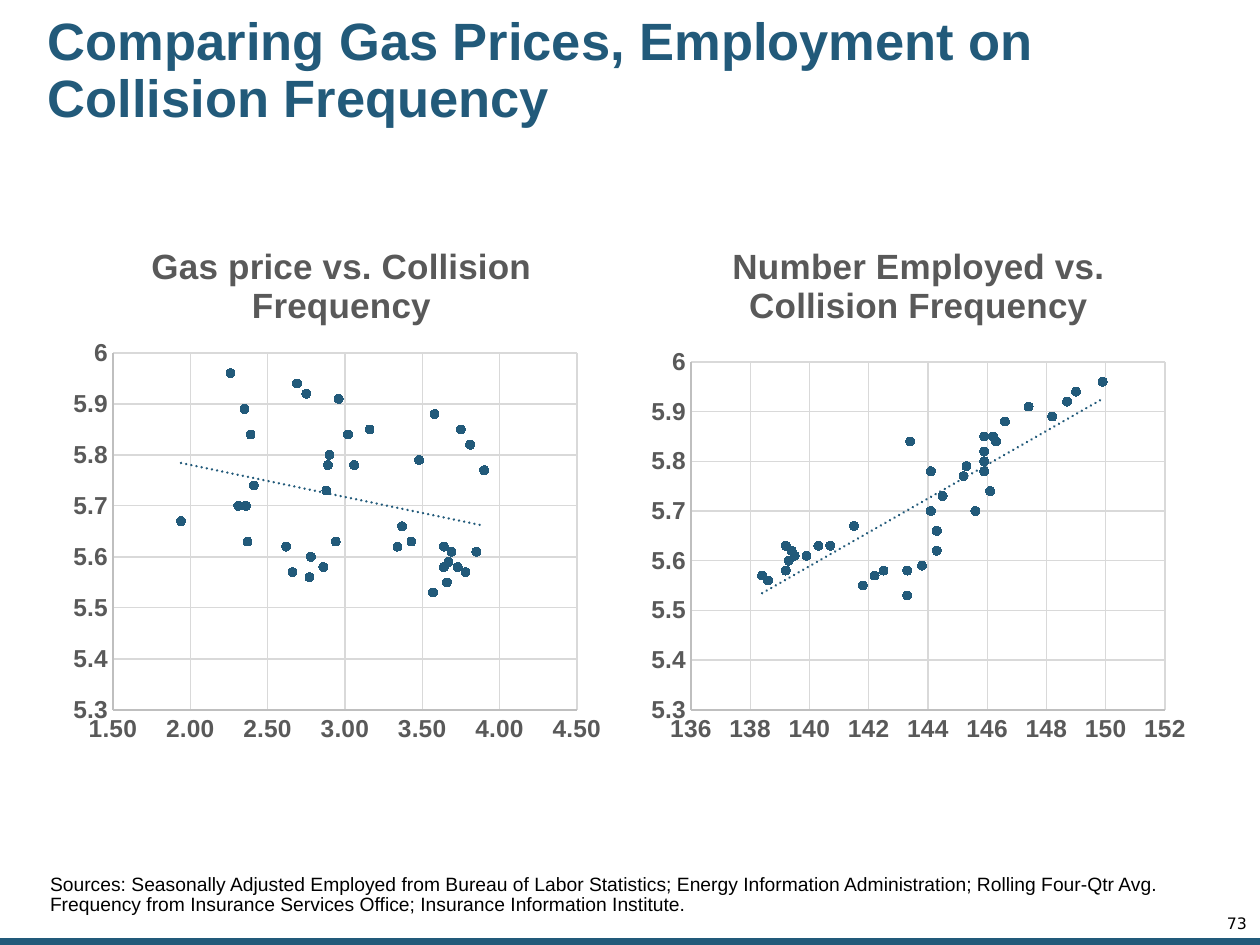
"""Build a slide that sets gas price and employment against collision frequency."""
from lxml import etree
from pptx import Presentation
from pptx.chart.data import XyChartData
from pptx.dml.color import RGBColor
from pptx.enum.chart import XL_CHART_TYPE, XL_MARKER_STYLE, XL_TICK_MARK
from pptx.enum.shapes import MSO_SHAPE
from pptx.enum.text import MSO_ANCHOR, PP_ALIGN
from pptx.oxml import parse_xml
from pptx.util import Emu, Pt

SCATTER = XL_CHART_TYPE.XY_SCATTER
CIRCLE = XL_MARKER_STYLE.CIRCLE
NO_TICK = XL_TICK_MARK.NONE
RECT = MSO_SHAPE.RECTANGLE
TOP, MIDDLE, BOTTOM = MSO_ANCHOR.TOP, MSO_ANCHOR.MIDDLE, MSO_ANCHOR.BOTTOM
LEFT, RIGHT = PP_ALIGN.LEFT, PP_ALIGN.RIGHT
SCALE = 914400 / 126
BLUE, GRAY, GRID, EDGE, BLACK = "225A7A", "595959", "D9D9D9", "BFBFBF", "000000"
C = "http://schemas.openxmlformats.org/drawingml/2006/chart"
A = "http://schemas.openxmlformats.org/drawingml/2006/main"

TREND = f"""<c:trendline xmlns:c="{C}" xmlns:a="{A}">
<c:spPr><a:ln w="19050" cap="rnd"><a:solidFill><a:srgbClr val="{BLUE}"/></a:solidFill>
<a:prstDash val="sysDot"/></a:ln></c:spPr>
<c:trendlineType val="linear"/><c:dispRSqr val="0"/><c:dispEq val="0"/></c:trendline>"""

GAS = [
    2.39, 2.89, 2.88, 2.31, 2.41, 3.06, 2.90, 3.02, 3.16, 3.81,
    3.90, 2.36, 1.94, 2.37, 2.62, 2.66, 2.77, 2.86, 2.78, 2.94,
    3.34, 3.85, 3.69, 3.43, 3.66, 3.78, 3.73, 3.57, 3.64, 3.67,
    3.64, 3.37, 3.48, 3.75, 3.58, 2.96, 2.35, 2.75, 2.69, 2.26,
]
JOBS = [
    143.4, 144.1, 144.5, 145.6, 146.1, 145.9, 145.9, 146.3, 146.2, 145.9,
    145.2, 144.1, 141.5, 140.3, 139.4, 138.4, 138.6, 139.2, 139.3, 139.2,
    139.4, 139.5, 139.9, 140.7, 141.8, 142.2, 142.5, 143.3, 143.3, 143.8,
    144.3, 144.3, 145.3, 145.9, 146.6, 147.4, 148.2, 148.7, 149.0, 149.9,
]
FREQ = [
    5.84, 5.78, 5.73, 5.70, 5.74, 5.78, 5.80, 5.84, 5.85, 5.82,
    5.77, 5.70, 5.67, 5.63, 5.62, 5.57, 5.56, 5.58, 5.60, 5.63,
    5.62, 5.61, 5.61, 5.63, 5.55, 5.57, 5.58, 5.53, 5.58, 5.59,
    5.62, 5.66, 5.79, 5.85, 5.88, 5.91, 5.89, 5.92, 5.94, 5.96,
]


def px(*sizes):
    return [Emu(round(size * SCALE)) for size in sizes]


def color(code):
    return RGBColor.from_string(code)


deck = Presentation()
deck.slide_width, deck.slide_height = px(1260, 945)
slide = deck.slides.add_slide(deck.slide_layouts[6])

bar = slide.shapes.add_shape(RECT, *px(0, 938, 1260, 7))
bar.shadow.inherit = False
bar.fill.solid()
bar.fill.fore_color.rgb = color(BLUE)
bar.line.fill.background()

texts = [
    ("Comparing Gas Prices, Employment on Collision Frequency",
     (42, 13, 1019, 118), (6, 6, 6, 6), MIDDLE, LEFT, 0.9, 30, "Arial", BLUE, True),
    ("73", (1186, 917, 61, 17), (0, 0, 0, 0), TOP, RIGHT, 0.85, 9, "DejaVu Sans", BLACK, False),
    ("Sources: Seasonally Adjusted Employed from Bureau of Labor Statistics; "
     "Energy Information Administration; Rolling Four-Qtr Avg. Frequency from "
     "Insurance Services Office; Insurance Information Institute.",
     (0, 874, 1227, 60), (50, 0, 0, 19), BOTTOM, LEFT, 0.85, 11, "Arial", BLACK, False),
]
for words, place, inset, anchor, align, space, size, face, ink, bold in texts:
    frame = slide.shapes.add_textbox(*px(*place)).text_frame
    frame.word_wrap = True
    frame.vertical_anchor = anchor
    (frame.margin_left, frame.margin_top,
     frame.margin_right, frame.margin_bottom) = px(*inset)
    para = frame.paragraphs[0]
    para.alignment = align
    para.line_spacing = space
    run = para.add_run()
    run.text = words
    run.font.size = Pt(size)
    run.font.name = face
    run.font.bold = bold
    run.font.color.rgb = color(ink)

WIDE, HIGH, HEAD = 557, 533, 220
charts = [
    ("Gas price vs. Collision Frequency", GAS, 63,
     (113, 353, 464, 357), (1.5, 4.5, 0.5), "0.00"),
    ("Number Employed vs. Collision Frequency", JOBS, 640,
     (691, 362, 474, 348), (136, 152, 2), "General"),
]
for name, base, left, plot, span, form in charts:
    data = XyChartData()
    dots = data.add_series("Series 1")
    for x, y in zip(base, FREQ):
        dots.add_data_point(x, y)
    chart = slide.shapes.add_chart(SCATTER, *px(left, HEAD, WIDE, HIGH), data).chart
    chart.has_legend = False
    chart.font.name = "Arial"
    chart.font.size = Pt(14)
    chart.font.bold = True
    chart.font.color.rgb = color(GRAY)

    chart.has_title = True
    run = chart.chart_title.text_frame.paragraphs[0].add_run()
    run.text = name
    run.font.name = "Arial"
    run.font.size = Pt(20)
    run.font.bold = True
    run.font.color.rgb = color(GRAY)
    chart.chart_title.include_in_layout = False

    axes = [(chart.category_axis, span, form), (chart.value_axis, (5.3, 6, 0.1), "General")]
    for axis, (low, high, step), code in axes:
        axis.minimum_scale, axis.maximum_scale, axis.major_unit = low, high, step
        axis.major_tick_mark = axis.minor_tick_mark = NO_TICK
        axis.tick_labels.number_format = code
        axis.tick_labels.number_format_is_linked = False
        axis.has_major_gridlines = True
        for line, ink in ((axis.format.line, EDGE), (axis.major_gridlines.format.line, GRID)):
            line.width = Pt(0.75)
            line.color.rgb = color(ink)

    chart.plots[0].vary_by_categories = False
    row = chart.plots[0].series[0]
    row.smooth = False
    row.format.line.fill.background()
    row.marker.style = CIRCLE
    row.marker.size = 5
    row.marker.format.fill.solid()
    row.marker.format.fill.fore_color.rgb = color(BLUE)
    row.marker.format.line.color.rgb = color(BLUE)
    row._element.find(f"{{{C}}}xVal").addprevious(parse_xml(TREND))

    area = chart._chartSpace.find(f".//{{{C}}}plotArea")
    for old in area.findall(f"{{{C}}}layout"):
        area.remove(old)
    layout = etree.Element(f"{{{C}}}layout")
    area.insert(0, layout)
    manual = etree.SubElement(layout, f"{{{C}}}manualLayout")
    parts = [
        ("layoutTarget", "inner"), ("xMode", "edge"), ("yMode", "edge"),
        ("x", (plot[0] - left) / WIDE), ("y", (plot[1] - HEAD) / HIGH),
        ("w", plot[2] / WIDE), ("h", plot[3] / HIGH),
    ]
    for tag, val in parts:
        etree.SubElement(manual, f"{{{C}}}{tag}").set("val", str(val))

deck.save("out.pptx")
